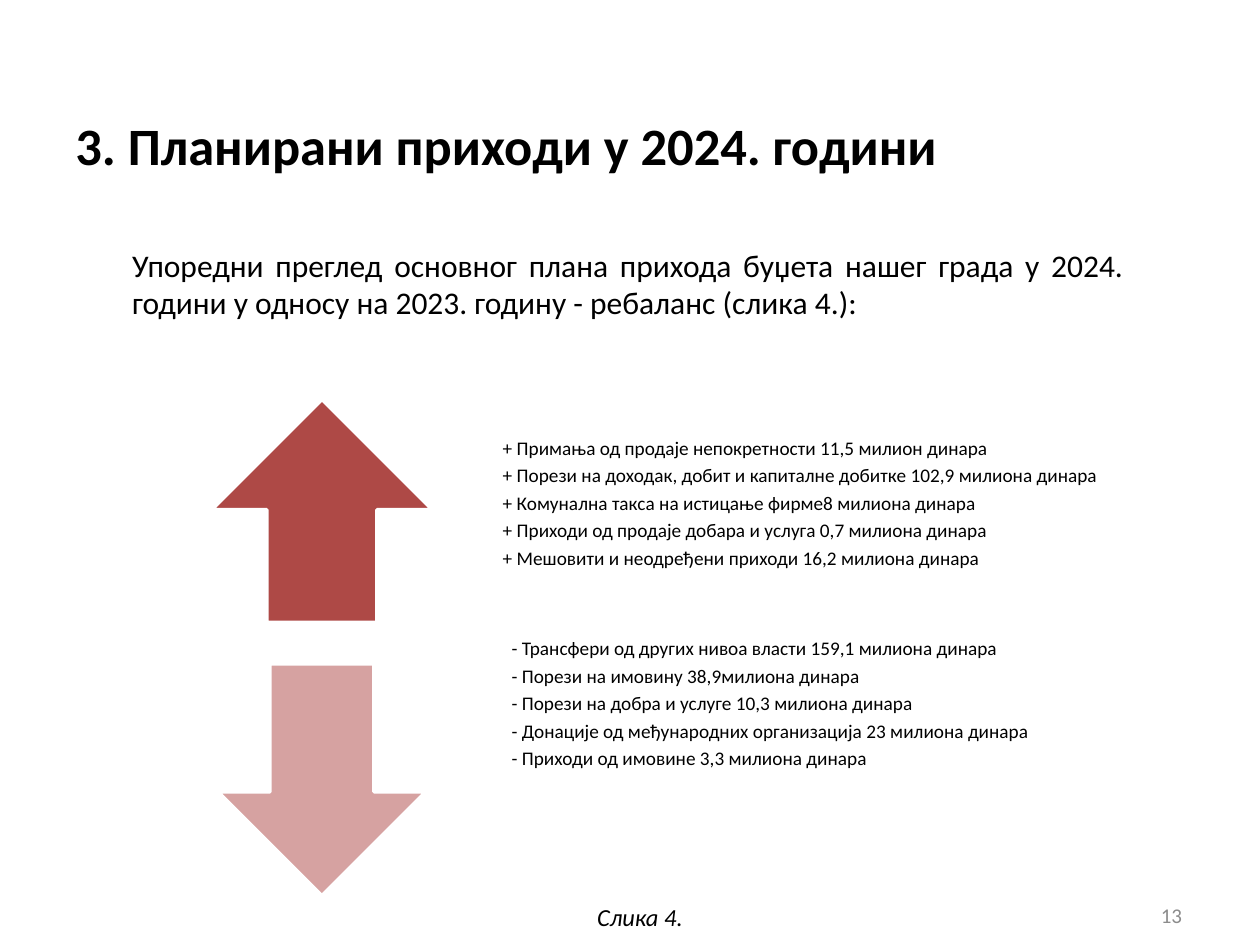
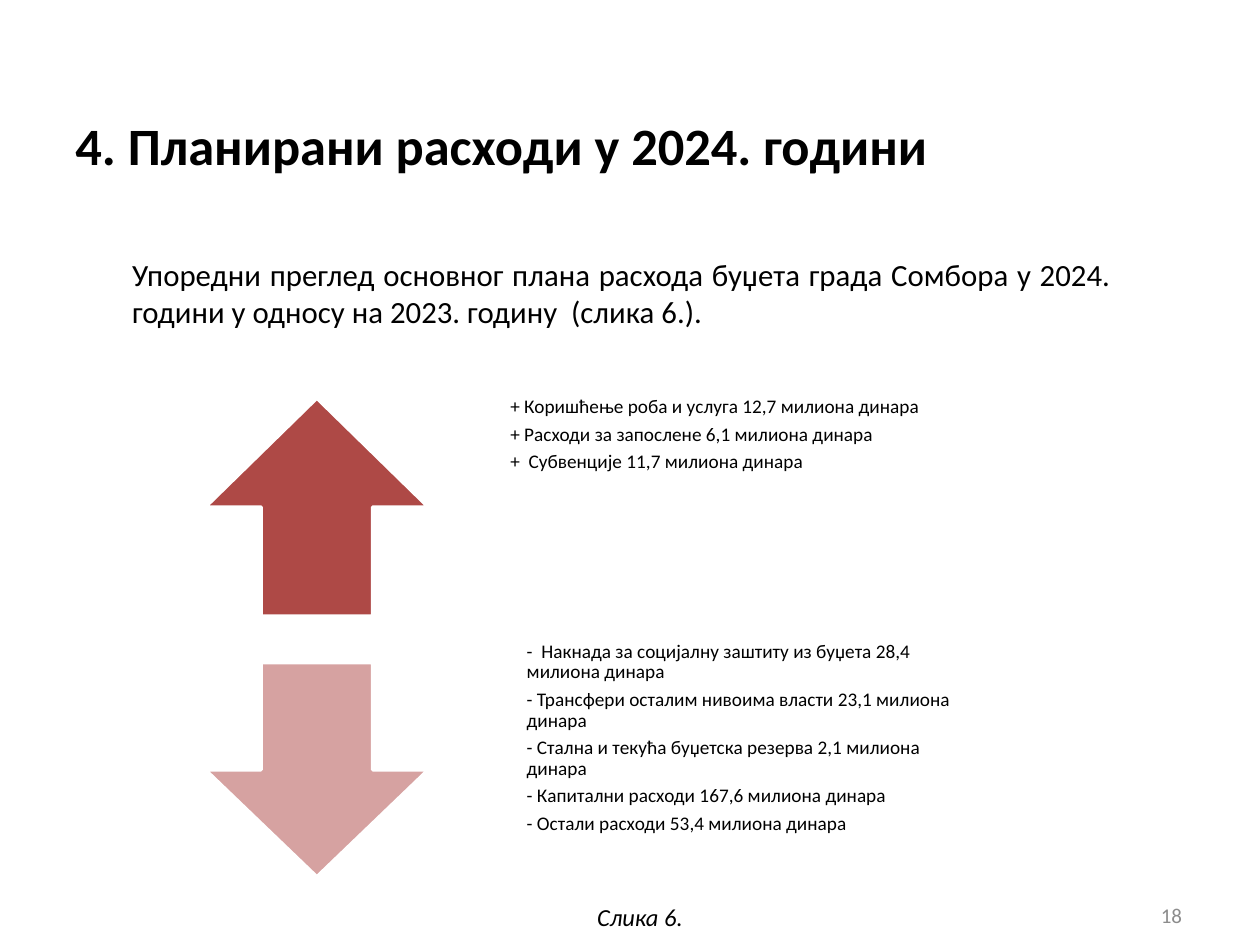
from pptx import Presentation
from pptx import util as u
from pptx.dml.color import RGBColor
from pptx.enum import shapes, text

PX = 9144
FONT = "Calibri"
COLORS = {"ink": "000000", "number": "8C8C8C", "rise": "AE4946", "fall": "D6A2A1", "outline": "FFFFFF"}

SLIDES = [
    {
        "title": "3. Планирани приходи у 2024. години",
        "intro": "Упоредни преглед основног плана прихода буџета нашег града у 2024. "
                 "години у односу на 2023. годину - ребаланс (слика 4.):",
        "intro_box": (95, 190, 807, 82),
        "intro_size": 18,
        "changes": [
            ("rise", (168, 317, 175, 177), (390, 348, 503, 115), [
                "+ Примања од продаје непокретности 11,5 милион динара",
                "+ Порези на доходак, добит и капиталне добитке 102,9 милиона динара",
                "+ Комунална такса на истицање фирме8 милиона динара",
                "+ Приходи од продаје добара и услуга 0,7 милиона динара",
                "+ Мешовити и неодређени приходи 16,2 милиона динара",
            ]),
            ("fall", (173, 527, 165, 184), (397, 507, 465, 115), [
                "- Трансфери од других нивоа власти 159,1 милиона динара",
                "- Порези на имовину 38,9милиона динара",
                "- Порези на добра и услуге 10,3 милиона динара",
                "- Донације од међународних организација 23 милиона динара",
                "- Приходи од имовине 3,3 милиона динара",
            ]),
        ],
        "caption": "Слика 4.",
        "number": "13",
    },
    {
        "title": "4. Планирани расходи у 2024. години",
        "intro": "Упоредни преглед основног плана расхода буџета града Сомбора у 2024. "
                 "години у односу на 2023. годину  (слика 6.).",
        "intro_box": (95, 198, 797, 62),
        "intro_size": 17.6,
        "changes": [
            ("rise", (163, 316, 177, 173), (396, 315, 477, 70), [
                "+ Коришћење роба и услуга 12,7 милиона динара",
                "+ Расходи за запослене 6,1 милиона динара",
                "+  Субвенције 11,7 милиона динара",
            ]),
            ("fall", (163, 526, 177, 170), (409, 509, 368, 165), [
                "-  Накнада за социјалну заштиту из буџета 28,4 милиона динара",
                "- Трансфери осталим нивоима власти 23,1 милиона динара",
                "- Стална и текућа буџетска резерва 2,1 милиона динара",
                "- Капитални расходи 167,6 милиона динара",
                "- Остали расходи 53,4 милиона динара",
            ]),
        ],
        "caption": "Слика 6.",
        "number": "18",
    },
]
ARROWS = {"rise": shapes.MSO_SHAPE.UP_ARROW, "fall": shapes.MSO_SHAPE.DOWN_ARROW}


def emu(box):
    return [value * PX for value in box]


def add_text(slide, box, lines, size, color="ink", bold=False, italic=False,
             align=text.PP_ALIGN.LEFT, anchor=text.MSO_ANCHOR.TOP, wrap=True):
    frame = slide.shapes.add_textbox(*emu(box)).text_frame
    frame.word_wrap = wrap
    frame.vertical_anchor = anchor
    frame.text = "\n".join(lines)
    for paragraph in frame.paragraphs:
        paragraph.alignment = align
        for run in paragraph.runs:
            run.font.name = FONT
            run.font.size = u.Pt(size)
            run.font.bold = bold
            run.font.italic = italic
            run.font.color.rgb = RGBColor.from_string(COLORS[color])
    return frame


deck = Presentation()
deck.slide_width, deck.slide_height = emu((1000, 750))

for content in SLIDES:
    slide = deck.slides.add_slide(deck.slide_layouts[6])
    add_text(slide, (50, 69, 726, 92), [content["title"]], 30, bold=True,
             anchor=text.MSO_ANCHOR.MIDDLE)
    add_text(slide, content["intro_box"], [content["intro"]], content["intro_size"],
             align=text.PP_ALIGN.JUSTIFY)

    for direction, arrow_box, list_box, items in content["changes"]:
        arrow = slide.shapes.add_shape(ARROWS[direction], *emu(arrow_box))
        arrow.shadow.inherit = False
        arrow.fill.solid()
        arrow.fill.fore_color.rgb = RGBColor.from_string(COLORS[direction])
        arrow.line.color.rgb = RGBColor.from_string(COLORS["outline"])
        arrow.line.width = u.Pt(2)

        changes = add_text(slide, list_box, items, 11)
        changes.margin_top = 0
        changes.margin_left = changes.margin_right = changes.margin_bottom = 9 * PX
        for paragraph in changes.paragraphs:
            paragraph.line_spacing = 0.9
            paragraph.space_after = u.Pt(3.85)

    add_text(slide, (464, 711, 94, 34), [content["caption"]], 14, italic=True, wrap=False)
    add_text(slide, (715, 706, 233, 40), [content["number"]], 12, "number",
             align=text.PP_ALIGN.RIGHT, anchor=text.MSO_ANCHOR.MIDDLE)

deck.save("out.pptx")
